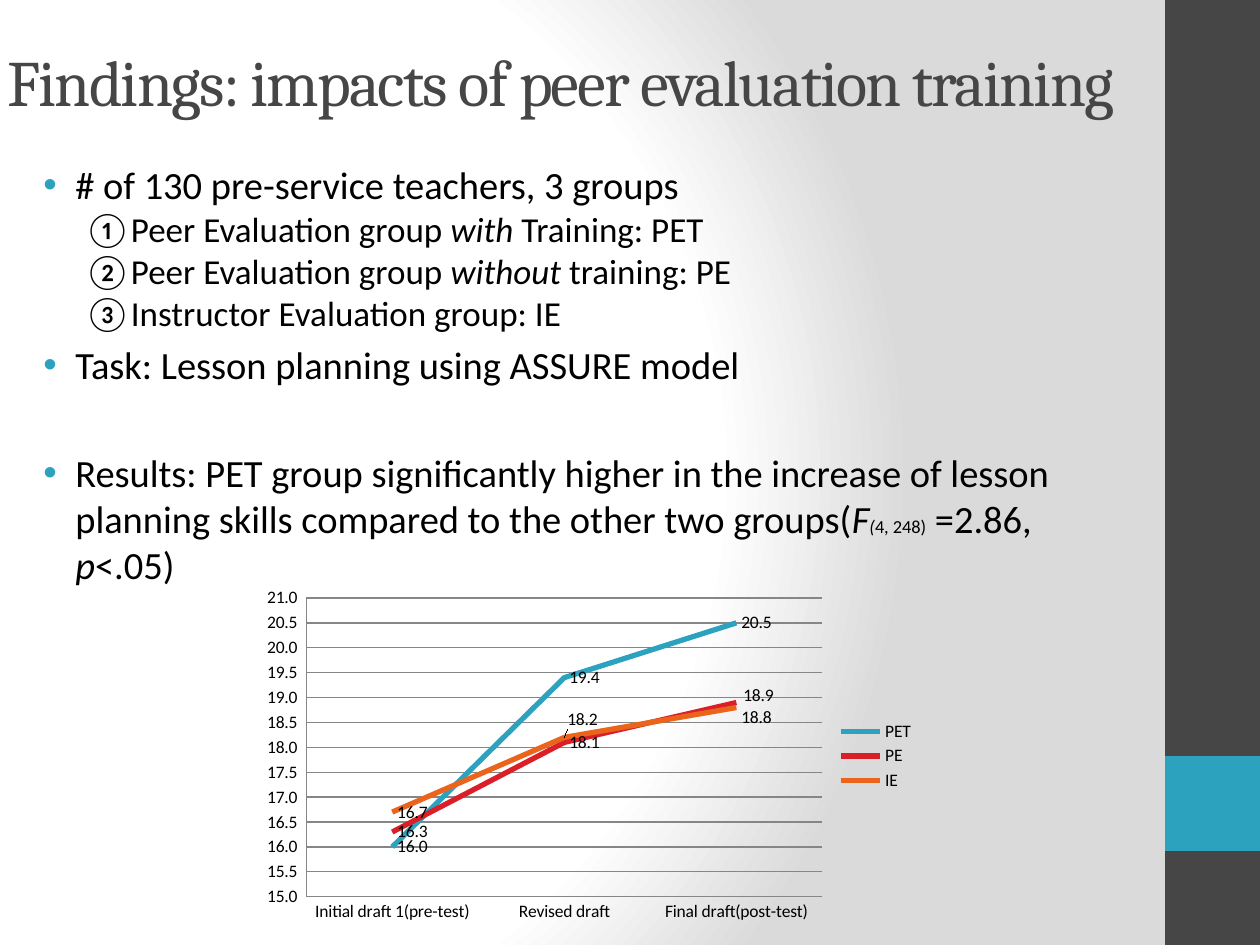
from lxml import etree
from pptx import Presentation
from pptx.chart.data import CategoryChartData
from pptx.dml.color import RGBColor
from pptx.enum.chart import XL_CHART_TYPE, XL_LABEL_POSITION, XL_LEGEND_POSITION, XL_TICK_MARK
from pptx.enum.shapes import MSO_SHAPE
from pptx.enum.text import MSO_ANCHOR
from pptx.oxml import parse_xml
from pptx.oxml.ns import nsdecls, qn
from pptx.util import Emu, Pt

DARK, TEAL, RED, ORANGE, BLACK = "464646", "2DA2BF", "DA1F28", "EB641B", "000000"
NUMBER_FORMAT = "0.0_ "
CHART_BOX = (253, 582, 674, 348)
PLOT_BOX = (306, 598, 516, 299)


def px(n):
    return Emu(round(n * 914400 / 126))


def rgb(value):
    return RGBColor.from_string(value)


def style(font, size, color=BLACK, name="Calibri"):
    font.size, font.name = Pt(size), name
    font.color.rgb = rgb(color)


def set_background(slide):
    slide.background.fill.gradient()
    grad = slide.background.fill._fill._gradFill
    for child in list(grad):
        grad.remove(child)
    stops = etree.SubElement(grad, qn("a:gsLst"))
    for pos, color in ((0, "FFFFFF"), (75, "FFFFFF"), (100, "DADADA")):
        stop = etree.SubElement(stops, qn("a:gs"), pos=str(pos * 1000))
        etree.SubElement(stop, qn("a:srgbClr"), val=color)
    circle = etree.SubElement(grad, qn("a:path"), path="circle")
    etree.SubElement(circle, qn("a:fillToRect"), l="20000", t="50000", r="100000", b="50000")


def add_block(slide, box, color):
    s = slide.shapes.add_shape(MSO_SHAPE.RECTANGLE, *map(px, box))
    s.shadow.inherit = False
    s.fill.solid()
    s.fill.fore_color.rgb = rgb(color)
    s.line.fill.background()


def add_text(slide, box):
    tf = slide.shapes.add_textbox(*map(px, box)).text_frame
    tf.word_wrap = True
    return tf


def add_title(slide, text):
    tf = add_text(slide, (-5, 26, 1196, 110))
    tf.vertical_anchor = MSO_ANCHOR.MIDDLE
    tf.text = text
    r = tf.paragraphs[0].runs[0]
    style(r.font, 37, DARK, "Cambria")
    r.font._element.set("spc", "-100")


def add_run(p, text, size, italic=False):
    r = p.add_run()
    r.text = text
    style(r.font, size)
    r.font.italic = italic


def set_indent(p, left, hanging=0):
    pPr = p._p.get_or_add_pPr()
    pPr.set("marL", str(px(left)))
    pPr.set("indent", str(-px(hanging)))
    return pPr


def add_bullet(p, space_before=0):
    p.space_before = Pt(space_before)
    pPr = set_indent(p, 48, 32)
    color = etree.SubElement(pPr, qn("a:buClr"))
    etree.SubElement(color, qn("a:srgbClr"), val=TEAL)
    etree.SubElement(pPr, qn("a:buFont"), typeface="Arial")
    etree.SubElement(pPr, qn("a:buChar"), char="•")


def add_body(slide):
    tf = add_text(slide, (15, 155, 1133, 747))
    # Each run is (text, size, italic); a space before of None marks a group line
    paragraphs = [
        (0, [("# of 130 pre-service teachers, 3 groups", 22, False)]),
        (None, [("①Peer Evaluation group ", 20, False), ("with", 20, True),
                (" Training: PET", 20, False)]),
        (None, [("②Peer Evaluation group ", 20, False), ("without ", 20, True),
                ("training: PE", 20, False)]),
        (None, [("③Instructor Evaluation group: IE", 20, False)]),
        (4.4, [("Task: Lesson planning using ASSURE model", 22, False)]),
        (35, [("Results: PET group significantly higher in the increase of lesson "
               "planning skills compared to the other two groups(", 22, False),
              ("F", 22, True), ("(", 10.5, True), ("4, 248)", 10.5, False),
              (" =2.86,", 22, False), (" p", 22, True), ("<.05)", 22, False)]),
    ]
    for i, (space, runs) in enumerate(paragraphs):
        p = tf.add_paragraph() if i else tf.paragraphs[0]
        if space is None:
            set_indent(p, 57)
        else:
            add_bullet(p, space)
        for run in runs:
            add_run(p, *run)


def manual_layout(x, y, extra=""):
    return parse_xml(f'<c:layout {nsdecls("c")}><c:manualLayout>{extra}'
                     f'<c:x val="{x:.3f}"/><c:y val="{y:.3f}"/></c:manualLayout></c:layout>')


def place_plot(chart):
    left, top, width, height = CHART_BOX
    x, y, w, h = PLOT_BOX
    layout = manual_layout((x - left) / width, (y - top) / height,
                           '<c:layoutTarget val="inner"/><c:xMode val="edge"/><c:yMode val="edge"/>')
    for tag, share in (("c:w", w / width), ("c:h", h / height)):
        etree.SubElement(layout[0], qn(tag), val=f"{share:.3f}")
    area = chart._chartSpace.chart.plotArea
    for old in area.findall(qn("c:layout")):
        area.remove(old)
    area.insert(0, layout)


def shift_label(series, index, dx, dy):
    series.points[index].data_label.position = XL_LABEL_POSITION.RIGHT
    label = series._element.find(f'{qn("c:dLbls")}/{qn("c:dLbl")}[{qn("c:idx")}][@val]')
    for label in series._element.iter(qn("c:dLbl")):
        if label.find(qn("c:idx")).get("val") == str(index):
            label.insert(1, manual_layout(dx / CHART_BOX[2], dy / CHART_BOX[3]))
            label.insert(2, parse_xml(f'<c:numFmt {nsdecls("c")} formatCode="{NUMBER_FORMAT}" '
                                      'sourceLinked="0"/>'))


def style_axes(chart):
    for axis in (chart.category_axis, chart.value_axis):
        axis.major_tick_mark = axis.minor_tick_mark = XL_TICK_MARK.NONE
        axis.format.line.color.rgb = rgb("868686")
        style(axis.tick_labels.font, 10)
    axis = chart.value_axis
    axis.minimum_scale, axis.maximum_scale, axis.major_unit = 15, 21, 0.5
    axis.major_gridlines.format.line.color.rgb = rgb("868686")
    axis.tick_labels.number_format = NUMBER_FORMAT
    axis.tick_labels.number_format_is_linked = False


def add_line_chart(slide):
    # Label shifts are {point: (dx, dy)}
    lines = [("PET", (16, 19.4, 20.5), TEAL, {}),
             ("PE", (16.3, 18.1, 18.9), RED, {2: (2, -7)}),
             ("IE", (16.7, 18.2, 18.8), ORANGE, {1: (-2, -18), 2: (0, 10)})]
    data = CategoryChartData(number_format=NUMBER_FORMAT)
    data.categories = ["Initial draft 1(pre-test)", "Revised draft", "Final draft(post-test)"]
    for name, values, _, _ in lines:
        data.add_series(name, values)
    chart = slide.shapes.add_chart(XL_CHART_TYPE.LINE, *map(px, CHART_BOX), data).chart
    style(chart.font, 10)
    chart.has_title = False
    chart.has_legend = True
    chart.legend.position = XL_LEGEND_POSITION.RIGHT
    chart.legend.include_in_layout = False
    chart.plots[0].vary_by_categories = False
    style_axes(chart)
    place_plot(chart)
    for series, (_, _, color, shifts) in zip(chart.plots[0].series, lines):
        series.smooth = False
        series.format.line.width = Pt(3)
        series.format.line.color.rgb = rgb(color)
        labels = series.data_labels
        labels.show_value = True
        labels.number_format, labels.number_format_is_linked = NUMBER_FORMAT, False
        labels.position = XL_LABEL_POSITION.RIGHT
        style(labels.font, 10)
        for index, shift in shifts.items():
            shift_label(series, index, *shift)


def main():
    prs = Presentation()
    prs.slide_width, prs.slide_height = px(1260), px(945)
    slide = prs.slides.add_slide(prs.slide_layouts[6])
    set_background(slide)
    # Side band
    add_block(slide, (1165, 0, 95, 945), DARK)
    add_block(slide, (1165, 756, 95, 95), TEAL)
    # Content
    add_title(slide, "Findings: impacts of peer evaluation training")
    add_body(slide)
    add_line_chart(slide)
    prs.save("out.pptx")


if __name__ == "__main__":
    main()
